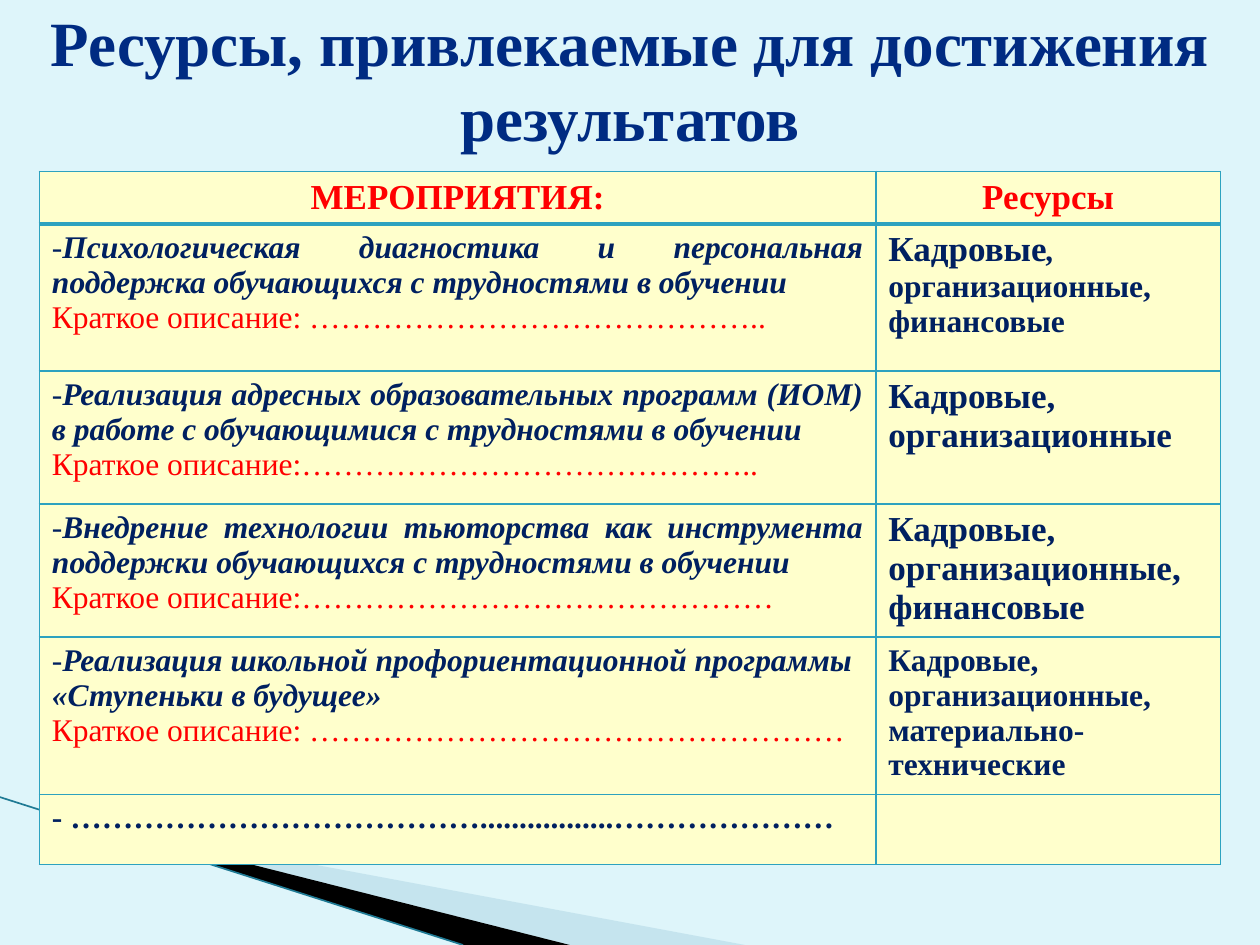
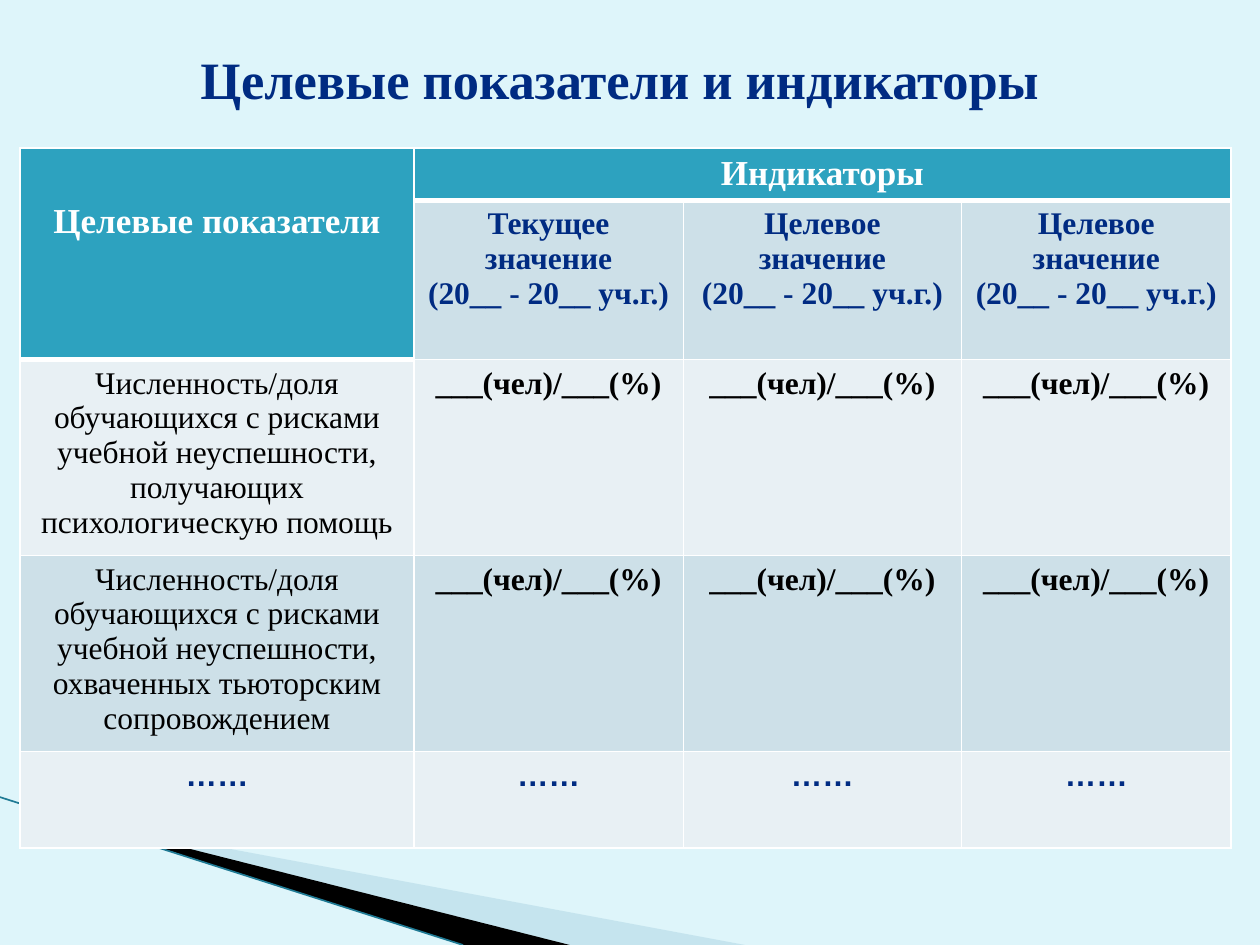
import lxml.etree
import pptx
import pptx.dml.color
import pptx.enum.shapes
import pptx.enum.text
import pptx.oxml.ns
import pptx.util

Pt = pptx.util.Pt
qn = pptx.oxml.ns.qn
SubElement = lxml.etree.SubElement
hex_color = pptx.dml.color.RGBColor.from_string
LEFT = pptx.enum.text.PP_ALIGN.LEFT
CENTER = pptx.enum.text.PP_ALIGN.CENTER
JUSTIFY = pptx.enum.text.PP_ALIGN.JUSTIFY

NAVY, BLUE, RED, TEAL = "002060", "002B82", "FF0000", "2DA2BF"
CREAM, WHITE, BLACK = "FFFFCC", "FFFFFF", "000000"
BAND_DARK, BAND_LIGHT = "CDE0E8", "E8F0F4"
SERIF = {"name": "Times New Roman", "size": Pt(18), "bold": True, "italic": False}

ACTIVITY = SERIF | {"color": NAVY, "italic": True}
DESCRIPTION = SERIF | {"color": RED, "bold": False}
RESOURCE = SERIF | {"color": NAVY}
RESOURCE_LARGE = RESOURCE | {"size": Pt(20)}
RESOURCE_HEAD = SERIF | {"color": RED, "size": Pt(20)}
INDICATOR_HEAD = RESOURCE_HEAD | {"color": WHITE}
PERIOD = SERIF | {"color": BLUE}
MEASURE = SERIF | {"color": BLACK, "bold": False}
VALUE = SERIF | {"color": BLACK}
MORE = PERIOD | {"name": "Arial"}


def write_paragraph(paragraph, runs, align):
    """Add (text, format) runs; the format's color is a hex string."""
    paragraph.alignment = align
    for text, look in runs:
        run = paragraph.add_run()
        run.text = text
        for attribute, value in look.items():
            if attribute == "color":
                run.font.color.rgb = hex_color(value)
            else:
                setattr(run.font, attribute, value)


def style_cell(cell, fill, line_color, widths):
    """Fill a cell and draw its borders; widths maps L, R, T, B to points."""
    cell.fill.solid()
    cell.fill.fore_color.rgb = hex_color(fill)
    properties = cell._tc.get_or_add_tcPr()
    for position, (side, width) in enumerate(widths.items()):
        border = lxml.etree.Element(qn(f"a:ln{side}"), w=str(Pt(width)))
        solid = SubElement(border, qn("a:solidFill"))
        SubElement(solid, qn("a:srgbClr"), val=line_color)
        properties.insert(position, border)


presentation = pptx.Presentation()
presentation.slide_width, presentation.slide_height = Pt(720), Pt(540)
background = presentation.slide_master.background.fill
background.solid()
background.fore_color.rgb = hex_color("DEF5FA")
layout = presentation.slide_layouts[5]

# Content: each cell is a list of paragraphs, each paragraph a list of runs
activities = [
    ("Психологическая диагностика и персональная поддержка обучающихся с трудностями в обучении",
     "Краткое описание: ……………………………………..", JUSTIFY,
     [("Кадровые", RESOURCE_LARGE), (", ", RESOURCE | {"italic": True}),
      ("организационные, финансовые", RESOURCE)]),
    ("Реализация адресных образовательных программ (ИОМ) в работе с обучающимися с трудностями в обучении",
     "Краткое описание:……………………………………..", JUSTIFY,
     [("Кадровые, организационные", RESOURCE_LARGE)]),
    ("Внедрение технологии тьюторства как инструмента поддержки обучающихся с трудностями в обучении",
     "Краткое описание:………………………………………", JUSTIFY,
     [("Кадровые, организационные, финансовые", RESOURCE_LARGE)]),
    ("Реализация школьной профориентационной программы «Ступеньки в будущее»",
     "Краткое описание: ……………………………………………", LEFT,
     [("Кадровые, организационные, материально-технические", RESOURCE)]),
]
resource_rows = [[(CENTER, [[("МЕРОПРИЯТИЯ:", RESOURCE_HEAD)]]),
                  (CENTER, [[("Ресурсы", RESOURCE_HEAD)]])]]
for activity, description, align, resources in activities:
    resource_rows.append([
        (align, [[(activity, ACTIVITY)], [(description, DESCRIPTION)]]),
        (LEFT, [resources])])
resource_rows.append([
    (JUSTIFY, [[("- ………………………………….................…………………", RESOURCE)]]), (LEFT, [])])

measures = [
    ["Численность/доля обучающихся с рисками учебной неуспешности, получающих",
     "психологическую помощь"],
    ["Численность/доля обучающихся с рисками учебной неуспешности, охваченных тьюторским сопровождением"],
]
period = "(20__ - 20__ уч.г.)"
indicator_rows = [
    [(CENTER, [[("Целевые показатели", INDICATOR_HEAD)]]),
     (CENTER, [[("Индикаторы", INDICATOR_HEAD)]]), (CENTER, []), (CENTER, [])],
    [(CENTER, [])] + [
        (CENTER, [[(line, PERIOD)] for line in (kind, "значение", period)])
        for kind in ("Текущее", "Целевое", "Целевое")],
]
for measure in measures:
    indicator_rows.append(
        [(CENTER, [[(line, MEASURE)] for line in measure])]
        + [(CENTER, [[("___(чел)/___(%)", VALUE)]])] * 3)
indicator_rows.append([(CENTER, [[("……", MORE)]])] * 4)

pages = [
    {"title": "Ресурсы, привлекаемые для достижения результатов",
     "title_left": 0, "title_width": 720, "title_size": 36,
     "left": 22.5, "top": 98, "columns": [478, 197],
     "heights": [30, 84, 76, 76, 90, 40], "rows": resource_rows,
     "fills": [CREAM] * 6, "line": TEAL, "rule": 2, "header_depths": [1, 1],
     "merges": []},
    {"title": "Целевые показатели и индикаторы ",
     "title_left": 34, "title_width": 648, "title_size": 30,
     "left": 11.5, "top": 84.5, "columns": [225, 154, 159, 154],
     "heights": [30, 91, 112, 112, 55], "rows": indicator_rows,
     "fills": [TEAL, BAND_DARK, BAND_LIGHT, BAND_DARK, BAND_LIGHT],
     "line": WHITE, "rule": 3, "header_depths": [2, 1, 1, 1],
     "merges": [((0, 0), (1, 0)), ((0, 1), (0, 3))]},
]

slides = [presentation.slides.add_slide(layout) for page in pages]

# Corner wedges and line, drawn once and moved to the shared layout
wedges = [
    ("A0CBDC", 40, [(39.6, 468), (425.7, 540), (325.7, 540)]),
    (BLACK, 100, [(38.2, 467.3), (325.7, 540), (264.6, 540)]),
]
corner = []
for color, opacity, points in wedges:
    (start_x, start_y), *others = [(Pt(x), Pt(y)) for x, y in points]
    outline = slides[0].shapes.build_freeform(start_x, start_y)
    outline.add_line_segments(others, close=True)
    wedge = outline.convert_to_shape()
    wedge.shadow.inherit = False
    wedge.fill.solid()
    wedge.fill.fore_color.rgb = hex_color(color)
    wedge.line.fill.background()
    if opacity < 100:
        tint = wedge.element.find(f".//{qn('a:solidFill')}/{qn('a:srgbClr')}")
        SubElement(tint, qn("a:alpha"), val=str(opacity * 1000))
    corner.append(wedge)
edge = slides[0].shapes.add_connector(
    pptx.enum.shapes.MSO_CONNECTOR.STRAIGHT, Pt(0), Pt(455.5), Pt(264.6), Pt(540))
edge.line.color.rgb = hex_color("1F7A94")
edge.line.width = Pt(0.95)
SubElement(edge.element.spPr, qn("a:effectLst"))
corner.append(edge)
for part in corner:
    layout.shapes.element.append(part.element)

for slide, page in zip(slides, pages):
    title = slide.shapes.title
    title.left, title.top = Pt(page["title_left"]), Pt(0)
    title.width, title.height = Pt(page["title_width"]), Pt(90)
    frame = title.text_frame
    frame.word_wrap = True
    frame.auto_size = pptx.enum.text.MSO_AUTO_SIZE.NONE
    frame.vertical_anchor = pptx.enum.text.MSO_ANCHOR.MIDDLE
    title_look = SERIF | {"size": Pt(page["title_size"]), "color": BLUE}
    write_paragraph(frame.paragraphs[0], [(page["title"], title_look)], CENTER)

    columns, heights = page["columns"], page["heights"]
    table = slide.shapes.add_table(
        len(heights), len(columns), Pt(page["left"]), Pt(page["top"]),
        Pt(sum(columns)), Pt(sum(heights))).table
    table.first_row = table.horz_banding = False
    for column, width in zip(table.columns, columns):
        column.width = Pt(width)
    for row, height in zip(table.rows, heights):
        row.height = Pt(height)
    for first, last in page["merges"]:
        table.cell(*first).merge(table.cell(*last))

    for r, row in enumerate(page["rows"]):
        for c, (align, paragraphs) in enumerate(row):
            cell = table.cell(r, c)
            depth = page["header_depths"][c]
            widths = {"L": 1, "R": 1,
                      "T": page["rule"] if r == depth else 1,
                      "B": page["rule"] if r == depth - 1 or cell.is_merge_origin else 1}
            fill = page["fills"][0] if r < depth else page["fills"][r]
            style_cell(cell, fill, page["line"], widths)
            for index, runs in enumerate(paragraphs):
                frame = cell.text_frame
                paragraph = frame.add_paragraph() if index else frame.paragraphs[0]
                if runs[0][1] is ACTIVITY:
                    bullet = paragraph._p.get_or_add_pPr()
                    bullet.set("marL", "0")
                    bullet.set("indent", "0")
                    SubElement(bullet, qn("a:buFont"), typeface=SERIF["name"])
                    SubElement(bullet, qn("a:buChar"), char="-")
                write_paragraph(paragraph, runs, align)
            if cell.is_merge_origin and cell.span_height > 1:
                cell.margin_top = Pt(31)

presentation.save("out.pptx")
